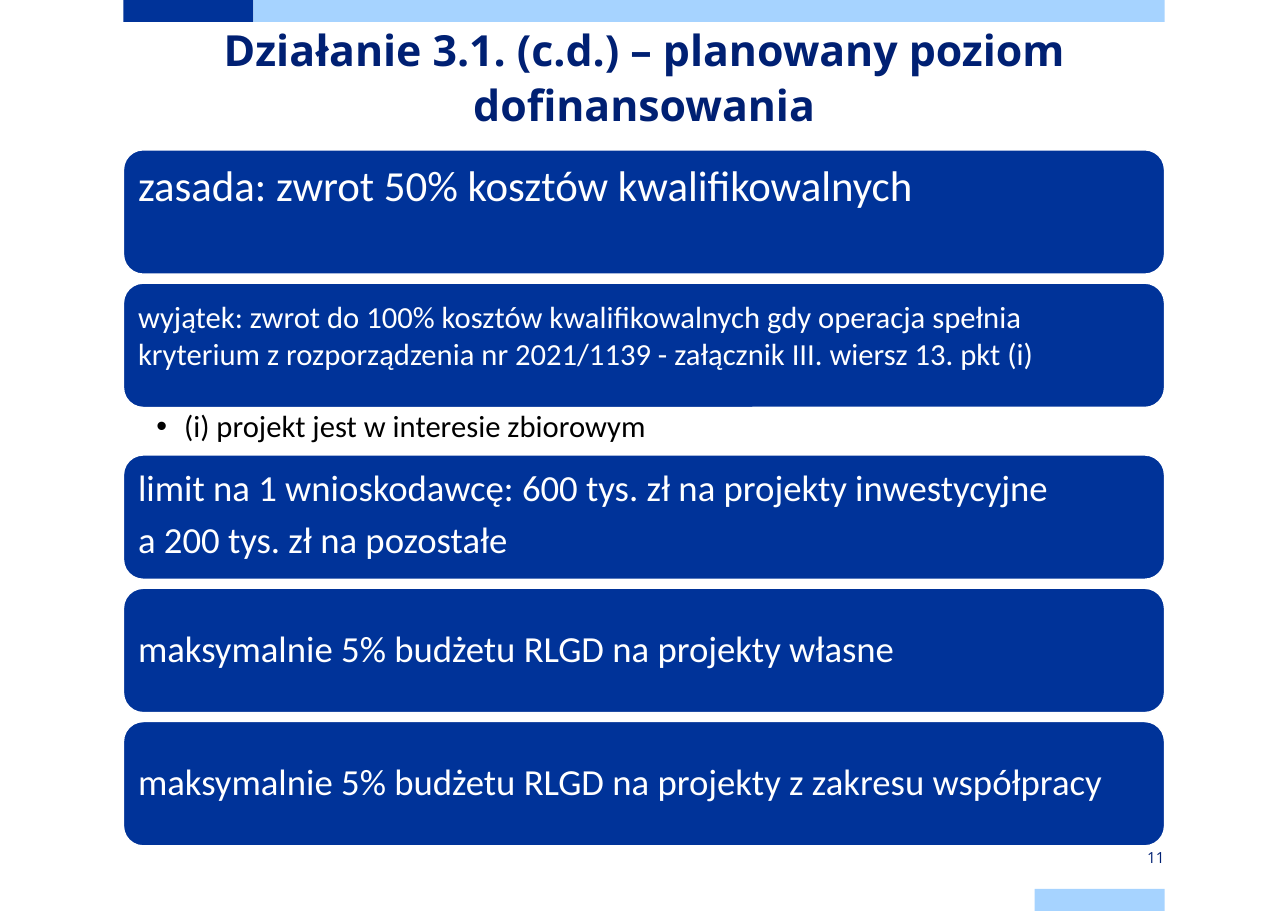
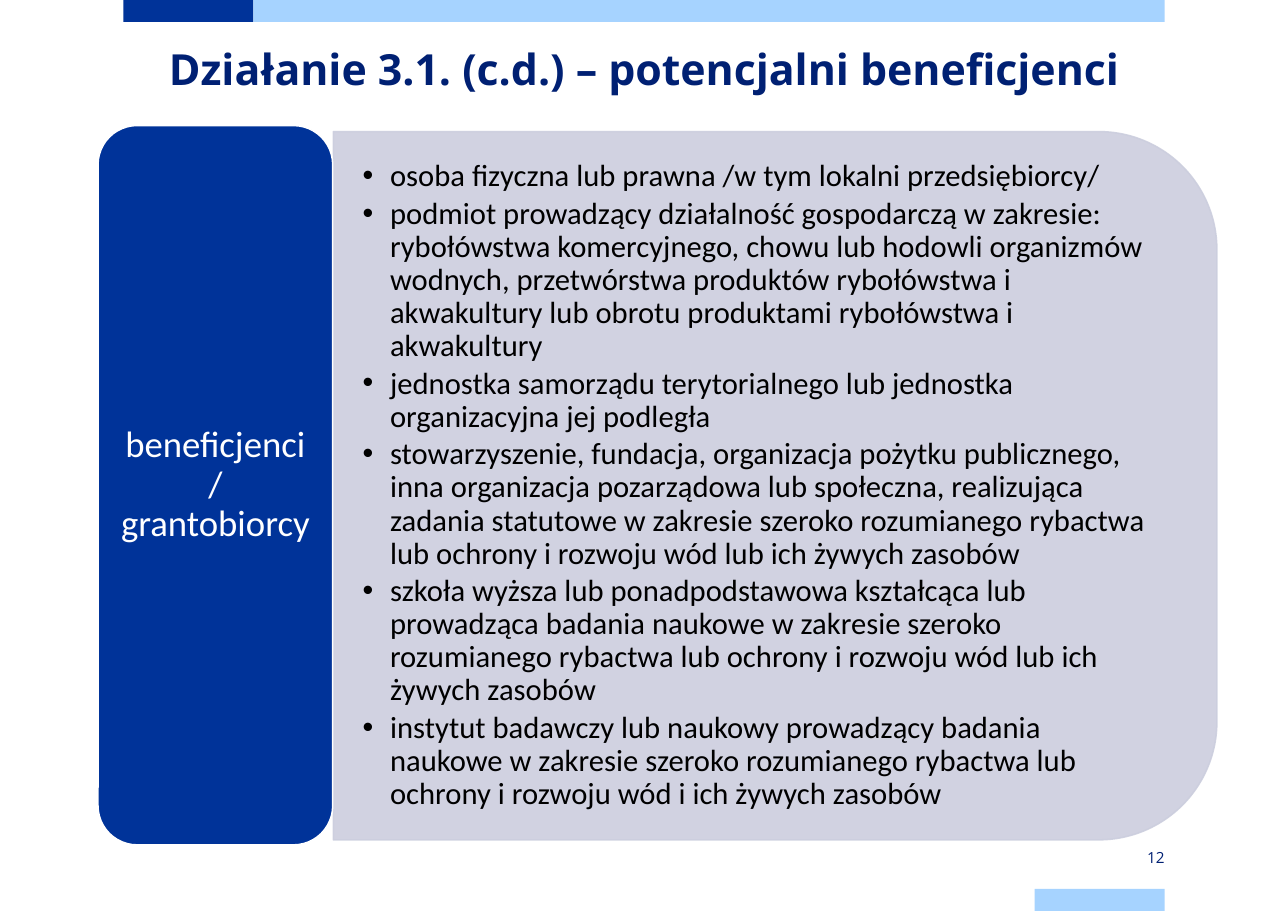
"""Build two slides on funding levels and beneficiaries of measure 3.1."""
from dataclasses import dataclass

from lxml.etree import SubElement
from pptx import Presentation
from pptx.dml.color import RGBColor
from pptx.enum.shapes import MSO_SHAPE as Preset
from pptx.enum.text import MSO_ANCHOR as Anchor, PP_ALIGN as Align
from pptx.oxml.ns import qn
from pptx.util import Inches, Pt

COLORS = {
    "navy": "003399",
    "sky": "A6D3FF",
    "title": "002073",
    "panel": "CCCEDE",
    "white": "FFFFFF",
    "black": "000000",
}
LEFT, WIDTH = 1.12, 9.45
BAND_WIDTH, BAND_HEIGHT = 1.18, 0.2
BAND_RIGHT = LEFT + WIDTH - BAND_WIDTH
SLIDE_HEIGHT = 8.27
CARD_HEIGHT, CARD_GAP, NOTE_HEIGHT = 1.13, 0.08, 0.43
BULLET_INDENT = 0.25


@dataclass(frozen=True)
class Box:
    left: float
    top: float
    width: float
    height: float

    def lengths(self) -> tuple:
        return tuple(Inches(v) for v in (self.left, self.top, self.width, self.height))


@dataclass(frozen=True)
class TextStyle:
    size: int
    color: str
    font: str = "Calibri"
    bold: bool = False
    align: Align = Align.LEFT
    anchor: Anchor = Anchor.TOP
    insets: tuple = (0, 0, 0, 0)
    line_spacing: float = 0.9
    gap: float = 0
    bullet: bool = False


@dataclass(frozen=True)
class Card:
    lines: tuple
    size: int = 24
    anchor: Anchor = Anchor.TOP
    line_spacing: float = 0.9
    note: str = ""


TITLE = TextStyle(28, "title", "Open Sans", True, Align.CENTER, line_spacing=Pt(36))
NUMBER = TextStyle(10, "title", "Open Sans", align=Align.RIGHT, anchor=Anchor.MIDDLE,
                   insets=(0, 0.08, 0, 0.08), line_spacing=1.0)
NOTE = TextStyle(20, "black", insets=(0.3, 0.03, 0.16, 0.03), bullet=True)
LIST = TextStyle(20, "black", anchor=Anchor.MIDDLE, insets=(0.27, 0.14, 0.27, 0.14),
                 gap=3, bullet=True)
LABEL = TextStyle(24, "white", align=Align.CENTER, anchor=Anchor.MIDDLE,
                  insets=(0.1, 0.05, 0.1, 0.05))

CARDS = (
    Card(("zasada: zwrot 50% kosztów kwalifikowalnych",), size=28),
    Card(("wyjątek: zwrot do 100% kosztów kwalifikowalnych gdy operacja spełnia "
          "kryterium z rozporządzenia nr 2021/1139 - załącznik III. wiersz 13. pkt (i)",),
         size=20, line_spacing=1.0, note="(i) projekt jest w interesie zbiorowym"),
    Card(("limit na 1 wnioskodawcę: 600 tys. zł na projekty inwestycyjne",
          "a 200 tys. zł na pozostałe")),
    Card(("maksymalnie 5% budżetu RLGD na projekty własne",), anchor=Anchor.MIDDLE),
    Card(("maksymalnie 5% budżetu RLGD na projekty z zakresu współpracy",),
         anchor=Anchor.MIDDLE),
)
BENEFICIARIES = (
    "osoba fizyczna lub prawna /w tym lokalni przedsiębiorcy/",
    "podmiot prowadzący działalność gospodarczą w zakresie: rybołówstwa komercyjnego, "
    "chowu lub hodowli organizmów wodnych, przetwórstwa produktów rybołówstwa i "
    "akwakultury lub obrotu produktami rybołówstwa i akwakultury",
    "jednostka samorządu terytorialnego lub jednostka organizacyjna jej podległa",
    "stowarzyszenie, fundacja, organizacja pożytku publicznego, inna organizacja "
    "pozarządowa lub społeczna, realizująca zadania statutowe w zakresie szeroko "
    "rozumianego rybactwa lub ochrony i rozwoju wód lub ich żywych zasobów",
    "szkoła wyższa lub ponadpodstawowa kształcąca lub prowadząca badania naukowe w "
    "zakresie szeroko rozumianego rybactwa lub ochrony i rozwoju wód lub ich żywych "
    "zasobów",
    "instytut badawczy lub naukowy prowadzący badania naukowe w zakresie szeroko "
    "rozumianego rybactwa lub ochrony i rozwoju wód i ich żywych zasobów",
)


def rgb(name: str) -> RGBColor:
    return RGBColor.from_string(COLORS[name])


def add_bullet(paragraph) -> None:
    properties = paragraph._p.get_or_add_pPr()
    properties.set("marL", str(Inches(BULLET_INDENT)))
    properties.set("indent", str(-Inches(BULLET_INDENT)))
    SubElement(properties, qn("a:buFont")).set("typeface", "Arial")
    SubElement(properties, qn("a:buChar")).set("char", "•")


def write(shape, lines: tuple, style: TextStyle) -> None:
    frame = shape.text_frame
    left, top, right, bottom = (Inches(inset) for inset in style.insets)
    frame_format = {
        "word_wrap": True,
        "vertical_anchor": style.anchor,
        "margin_left": left,
        "margin_top": top,
        "margin_right": right,
        "margin_bottom": bottom,
    }
    for name, value in frame_format.items():
        setattr(frame, name, value)
    font_format = {"name": style.font, "size": Pt(style.size), "bold": style.bold}
    for index, line in enumerate(lines):
        paragraph = frame.add_paragraph() if index else frame.paragraphs[0]
        if style.bullet:
            add_bullet(paragraph)
        paragraph.alignment = style.align
        paragraph.line_spacing = style.line_spacing
        if index:
            paragraph.space_before = Pt(style.gap)
        run = paragraph.add_run()
        run.text = line
        for name, value in font_format.items():
            setattr(run.font, name, value)
        run.font.color.rgb = rgb(style.color)


def add_text(slide, box: Box, lines: tuple, style: TextStyle) -> None:
    write(slide.shapes.add_textbox(*box.lengths()), lines, style)


def add_block(slide, preset: Preset, box: Box, fill: str, line: str = ""):
    shape = slide.shapes.add_shape(preset, *box.lengths())
    shape.shadow.inherit = False
    shape.fill.solid()
    shape.fill.fore_color.rgb = rgb(fill)
    if line:
        shape.line.color.rgb = rgb(line)
        shape.line.width = Pt(1)
    else:
        shape.line.fill.background()
    return shape


def add_base_slide(presentation, title: str, title_box: Box, number: int):
    slide = presentation.slides.add_slide(presentation.slide_layouts[6])
    bands = (
        (LEFT, 0, BAND_WIDTH, "navy"),
        (LEFT + BAND_WIDTH, 0, WIDTH - BAND_WIDTH, "sky"),
        (BAND_RIGHT, SLIDE_HEIGHT - BAND_HEIGHT, BAND_WIDTH, "sky"),
    )
    for left, top, width, color in bands:
        add_block(slide, Preset.RECTANGLE, Box(left, top, width, BAND_HEIGHT), color)
    add_text(slide, title_box, (title,), TITLE)
    add_text(slide, Box(BAND_RIGHT, 7.68, BAND_WIDTH, BAND_HEIGHT), (str(number),), NUMBER)
    return slide


def add_funding_slide(presentation) -> None:
    slide = add_base_slide(presentation,
                           "Działanie 3.1. (c.d.) – planowany poziom dofinansowania",
                           Box(LEFT, 0.18, WIDTH, 1.18), 11)
    top = 1.36
    for card in CARDS:
        shape = add_block(slide, Preset.ROUNDED_RECTANGLE,
                          Box(LEFT, top, WIDTH, CARD_HEIGHT), "navy", "white")
        shape.adjustments[0] = 0.16
        write(shape, card.lines,
              TextStyle(card.size, "white", anchor=card.anchor, insets=(0.08,) * 4,
                        line_spacing=card.line_spacing, gap=8))
        top += CARD_HEIGHT
        if card.note:
            add_text(slide, Box(LEFT, top, WIDTH, NOTE_HEIGHT), (card.note,), NOTE)
            top += NOTE_HEIGHT
        else:
            top += CARD_GAP


def add_beneficiaries_slide(presentation) -> None:
    slide = add_base_slide(presentation, "Działanie 3.1. (c.d.) – potencjalni beneficjenci",
                           Box(LEFT, 0.35, WIDTH, 0.63), 12)
    panel = add_block(slide, Preset.ROUND_2_SAME_RECTANGLE, Box(3.82, 0.4, 6.43, 8.02),
                      "panel", "panel")
    panel.rotation = 90
    for color in panel._element.spPr.iter(qn("a:srgbClr")):
        SubElement(color, qn("a:alpha")).set("val", "90000")
    add_text(slide, Box(3.02, 1.51, 7.71, 5.8), BENEFICIARIES, LIST)
    label = add_block(slide, Preset.ROUNDED_RECTANGLE, Box(0.89, 1.14, 2.13, 6.53),
                      "navy", "white")
    write(label, ("beneficjenci / grantobiorcy",), LABEL)


def main() -> None:
    presentation = Presentation()
    presentation.slide_width = Inches(11.69)
    presentation.slide_height = Inches(SLIDE_HEIGHT)
    add_funding_slide(presentation)
    add_beneficiaries_slide(presentation)
    presentation.save("out.pptx")


if __name__ == "__main__":
    main()
